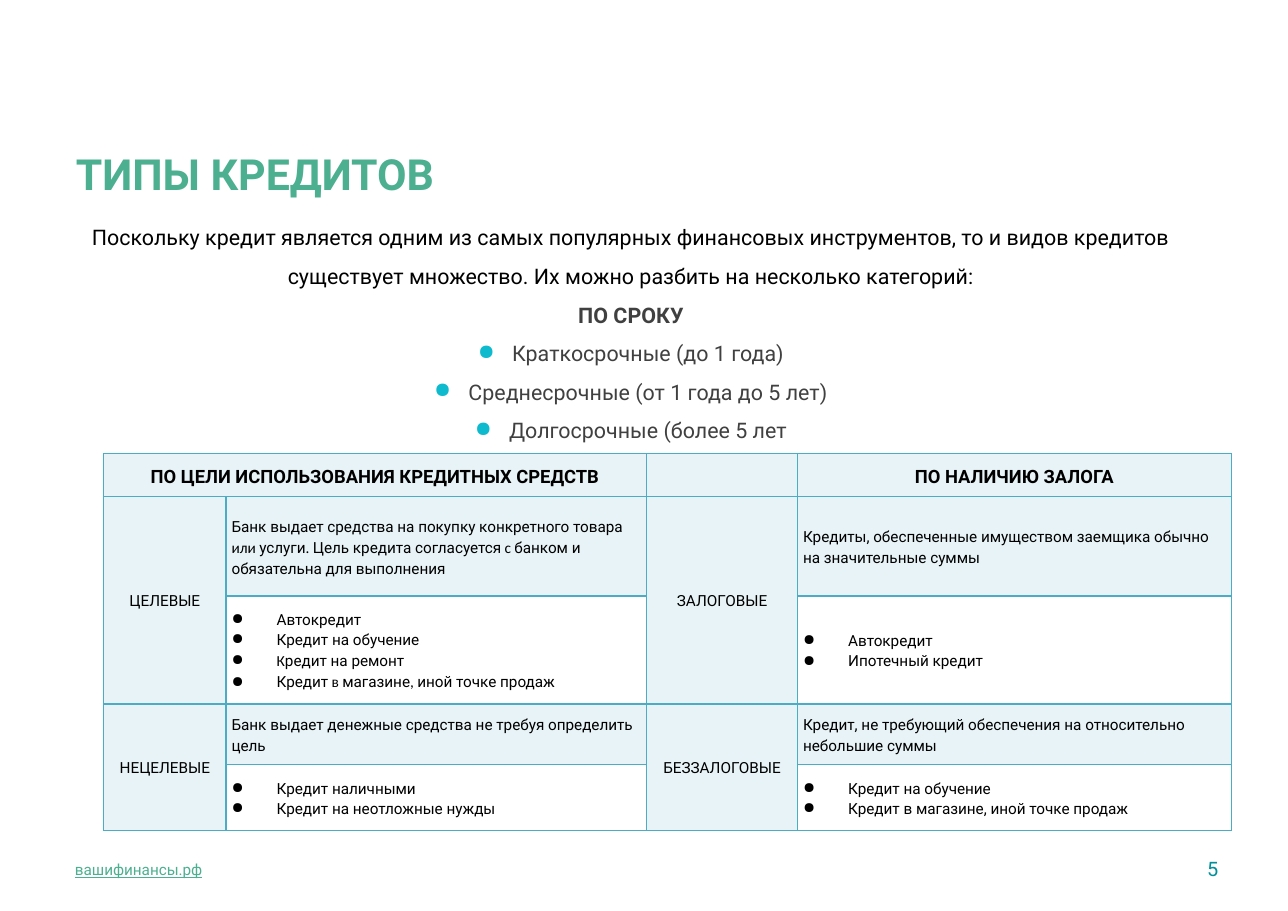
"""Build the slide on types of credit, with an introduction and a table of categories."""
from dataclasses import dataclass
from typing import Optional

from lxml import etree
from pptx import Presentation
from pptx.dml.color import RGBColor
from pptx.enum import text
from pptx.oxml import ns
from pptx.util import Cm, Pt

LEFT, CENTER, RIGHT = text.PP_ALIGN.LEFT, text.PP_ALIGN.CENTER, text.PP_ALIGN.RIGHT
TOP, MIDDLE = text.MSO_ANCHOR.TOP, text.MSO_ANCHOR.MIDDLE


@dataclass(frozen=True)
class Theme:
    """Fonts, colours and type sizes of the slide."""
    font: str = "Roboto"
    accent_font: str = "Calibri"
    green: str = "4CAF90"
    teal: str = "00909B"
    bullet: str = "0EBACE"
    black: str = "000000"
    grey: str = "404040"
    cell: str = "E7F3F6"
    border: str = "4BACC6"
    title_size: int = 28
    intro_size: int = 14
    number_size: int = 13
    header_size: int = 12
    small_size: int = 10


THEME = Theme()


@dataclass(frozen=True)
class Line:
    """A paragraph; every second part between bars is in the accent font."""
    wording: str
    size: int = THEME.small_size
    color: str = THEME.black
    bold: bool = False
    underline: bool = False
    align: int = LEFT
    spacing: float = 1.0
    bullet_color: Optional[str] = None
    indent: float = 0


@dataclass(frozen=True)
class Box:
    """A text box, in centimetres."""
    left: float
    top: float
    width: float
    height: float
    lines: list[Line]
    anchor: int = MIDDLE
    side_inset: float = 0.28


@dataclass(frozen=True)
class Entry:
    """A table cell with its place and span."""
    row: int
    column: int
    lines: list[Line]
    row_span: int = 1
    column_span: int = 1
    filled: bool = True


def add_bullet(paragraph, color: str, indent: float) -> None:
    """Give a paragraph a round bullet with a hanging indent."""
    properties = paragraph._p.get_or_add_pPr()
    properties.set("marL", str(Cm(indent)))
    properties.set("indent", str(-Cm(indent)))
    bullet_color = etree.SubElement(properties, ns.qn("a:buClr"))
    etree.SubElement(bullet_color, ns.qn("a:srgbClr"), val=color)
    etree.SubElement(properties, ns.qn("a:buChar"), char="●")


def write_lines(frame, lines: list[Line]) -> None:
    """Write lines into a text frame."""
    for index, line in enumerate(lines):
        paragraph = frame.add_paragraph() if index else frame.paragraphs[0]
        paragraph.alignment = line.align
        paragraph.line_spacing = line.spacing
        if line.bullet_color:
            add_bullet(paragraph, line.bullet_color, line.indent)
        font = paragraph.font
        font.name, font.size = THEME.font, Pt(line.size)
        font.bold, font.underline = line.bold, line.underline
        font.color.rgb = RGBColor.from_string(line.color)
        for position, part in enumerate(line.wording.split("|")):
            if part:
                run = paragraph.add_run()
                run.text = part
                if position % 2:
                    run.font.name = THEME.accent_font


def add_box(slide, box: Box) -> None:
    """Draw a text box."""
    shape = slide.shapes.add_textbox(Cm(box.left), Cm(box.top), Cm(box.width), Cm(box.height))
    frame = shape.text_frame
    frame.word_wrap = True
    frame.vertical_anchor = box.anchor
    frame.margin_left = frame.margin_right = Cm(box.side_inset)
    frame.margin_top = frame.margin_bottom = Cm(0.13)
    write_lines(frame, box.lines)


def format_cell(cell, filled: bool) -> None:
    """Set the fill, borders and margins of a cell."""
    if filled:
        cell.fill.solid()
        cell.fill.fore_color.rgb = RGBColor.from_string(THEME.cell)
    else:
        cell.fill.background()
    cell.vertical_anchor = MIDDLE
    cell.margin_left = cell.margin_right = cell.margin_top = cell.margin_bottom = Cm(0.13)
    properties = cell._tc.get_or_add_tcPr()
    for index, side in enumerate(("lnL", "lnR", "lnT", "lnB")):
        border = etree.Element(ns.qn(f"a:{side}"), w=str(Pt(1)))
        fill = etree.SubElement(border, ns.qn("a:solidFill"))
        etree.SubElement(fill, ns.qn("a:srgbClr"), val=THEME.border)
        properties.insert(index, border)


def add_credit_table(slide, entries: list[Entry]) -> None:
    """Draw the table of credit types."""
    widths = [2.82, 9.7, 3.48, 10.01]
    heights = [0.99, 2.29, 2.49, 1.4, 1.52]
    frame = slide.shapes.add_table(len(heights), len(widths), Cm(2.39), Cm(10.46),
                                   Cm(sum(widths)), Cm(sum(heights)))
    table = frame.table
    table.first_row = table.horz_banding = False
    for column, width in zip(table.columns, widths):
        column.width = Cm(width)
    for row, height in zip(table.rows, heights):
        row.height = Cm(height)
    unfilled = {(entry.row, entry.column) for entry in entries if not entry.filled}
    for row in range(len(heights)):
        for column in range(len(widths)):
            cell = table.cell(row, column)
            format_cell(cell, (row, column) not in unfilled)
            cell.text_frame.paragraphs[0].font.size = Pt(THEME.small_size)
    for entry in entries:
        cell = table.cell(entry.row, entry.column)
        if entry.row_span * entry.column_span > 1:
            cell.merge(table.cell(entry.row + entry.row_span - 1,
                                  entry.column + entry.column_span - 1))
        write_lines(cell.text_frame, entry.lines)


def header(column: int, wording: str, span: int = 1) -> Entry:
    """Describe a heading cell."""
    line = Line(wording, THEME.header_size, bold=True, align=CENTER, spacing=1.15)
    return Entry(0, column, [line], column_span=span)


def credit_type(row: int, column: int, name: str, summary: str, examples: list[str]) -> list[Entry]:
    """Describe a credit type with its summary and examples."""
    bullets = [Line(example, spacing=1.15, bullet_color=THEME.black, indent=1.04)
               for example in examples]
    return [
        Entry(row, column, [Line(name, align=CENTER, spacing=1.15)], row_span=2),
        Entry(row, column + 1, [Line(summary, spacing=1.15)]),
        Entry(row + 1, column + 1, bullets, filled=False),
    ]


def intro_line(wording: str, color: str = THEME.grey, bold: bool = False,
               bullet_color: Optional[str] = None) -> Line:
    """Describe a centred line of the introduction."""
    return Line(wording, THEME.intro_size, color, bold, align=CENTER, spacing=1.5,
                bullet_color=bullet_color, indent=0.79)


TERMS = ["Краткосрочные (до 1 года)", "Среднесрочные (от 1 года до 5 лет)",
         "Долгосрочные (более 5 лет"]
INTRO = [
    intro_line("Поскольку кредит является одним из самых популярных финансовых инструментов, "
               "то и видов кредитов существует множество. Их можно разбить на несколько "
               "категорий:", THEME.black),
    intro_line("ПО СРОКУ", bold=True),
    *[intro_line(term, bullet_color=THEME.bullet) for term in TERMS],
]
BOXES = [
    Box(1.45, 19.48, 10.08, 1.12, [Line("вашифинансы.рф", color=THEME.green, underline=True)]),
    Box(26.16, 19.46, 2.21, 1.12, [Line("5", THEME.number_size, THEME.teal, align=RIGHT)]),
    Box(1.47, 3.28, 26.72, 1.47,
        [Line("ТИПЫ КРЕДИТОВ", THEME.title_size, THEME.green, bold=True)], TOP),
    Box(1.47, 4.75, 26.16, 6.53, INTRO, TOP, 0.13),
]
ENTRIES = [
    header(0, "ПО ЦЕЛИ ИСПОЛЬЗОВАНИЯ КРЕДИТНЫХ СРЕДСТВ", 2),
    header(3, "ПО НАЛИЧИЮ ЗАЛОГА"),
    *credit_type(1, 0, "ЦЕЛЕВЫЕ",
                 "Банк выдает средства на покупку конкретного товара| или |услуги|. |"
                 "Цель кредита согласуется| с |банком и обязательна для выполнения",
                 ["Автокредит", "Кредит на обучение", "|К|редит на ремонт",
                  "Кредит| в |магазине|, |иной точке продаж"]),
    *credit_type(1, 2, "ЗАЛОГОВЫЕ",
                 "Кредиты, обеспеченные имуществом заемщика обычно на значительные суммы",
                 ["Автокредит", "Ипотечный кредит"]),
    *credit_type(3, 0, "НЕЦЕЛЕВЫЕ", "Банк выдает денежные средства не требуя определить цель",
                 ["Кредит наличными", "Кредит на неотложные нужды"]),
    *credit_type(3, 2, "БЕЗЗАЛОГОВЫЕ",
                 "Кредит, не требующий обеспечения на относительно небольшие суммы",
                 ["Кредит на обучение", "Кредит в магазине, иной точке продаж"]),
]


def main() -> None:
    """Build and save the presentation."""
    presentation = Presentation()
    presentation.slide_width, presentation.slide_height = Cm(29.7), Cm(21)
    slide = presentation.slides.add_slide(presentation.slide_layouts[6])
    for box in BOXES:
        add_box(slide, box)
    add_credit_table(slide, ENTRIES)
    presentation.save("out.pptx")


if __name__ == "__main__":
    main()
